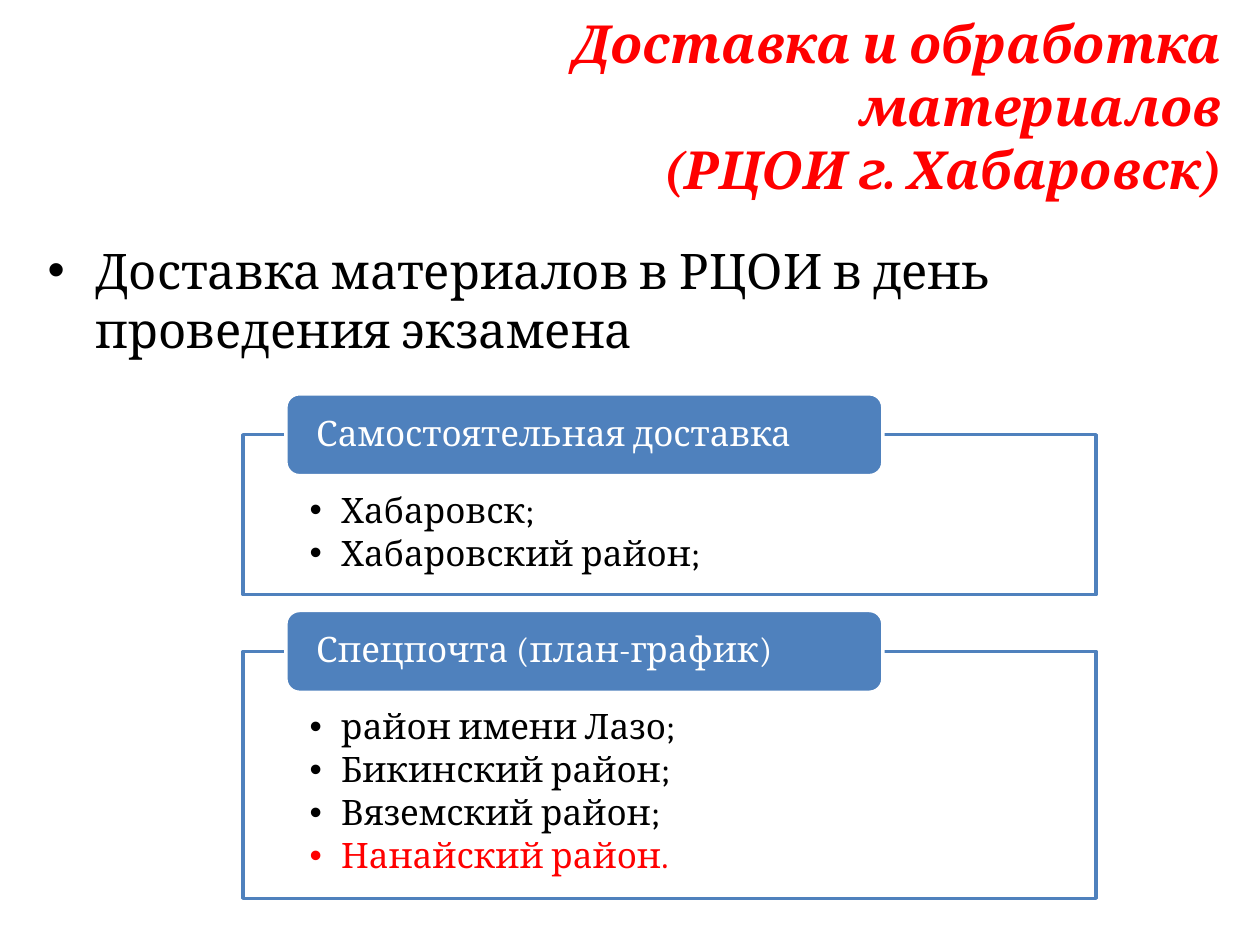
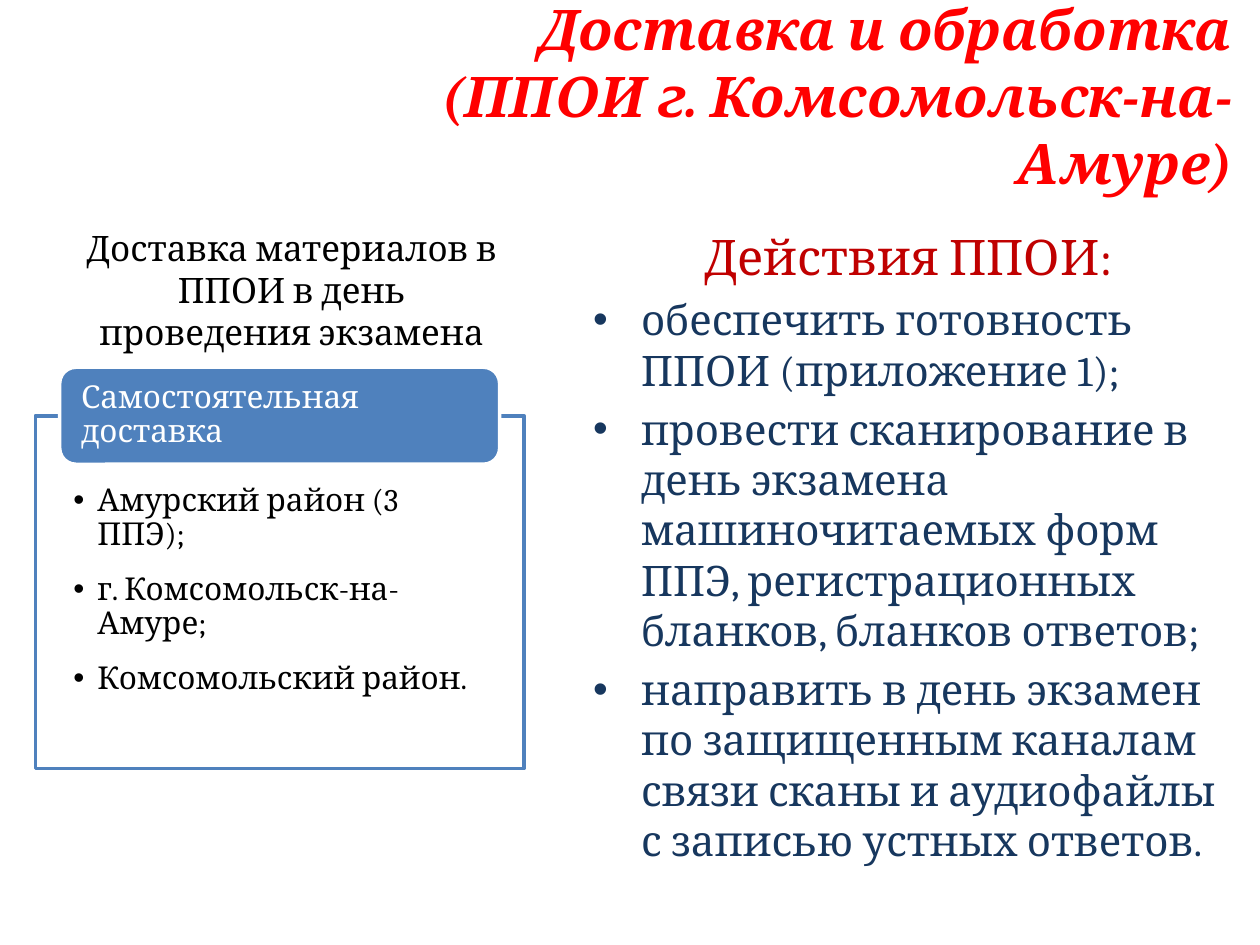
from dataclasses import dataclass
from lxml import etree
from pptx import Presentation
from pptx.dml.color import RGBColor
from pptx.enum.shapes import MSO_SHAPE as Shape
from pptx.enum.text import MSO_ANCHOR as Anchor, PP_ALIGN as Align
from pptx.oxml.ns import qn
from pptx.util import Inches, Pt


@dataclass(frozen=True)
class Theme:
    font: str = "Cambria"
    white: str = "FFFFFF"
    black: str = "000000"
    red: str = "FF0000"
    dark_red: str = "C00000"
    blue: str = "4F81BD"
    navy: str = "17375E"
    small: int = 18
    medium: int = 20
    text: int = 24
    large: int = 28
    outline: int = 2
    body_indent: float = 0.38


THEME = Theme()


def line(text, size, color, **formats):
    """Describe one paragraph; formats may hold bullet indent, align, spacing."""
    return dict(text=text, size=size, color=color, **formats)


def bullet(text, size, color):
    return line(text, size, color, indent=THEME.body_indent, before=0.2 * size)


PAGES = [
    dict(
        title=("Доставка и обработка материалов\n(РЦОИ г. Хабаровск)", 30, (2.56, 0.21, 7.24, 1.25)),
        texts=[
            ((0.28, 1.86, 9.21, 1.2), [
                bullet("Доставка материалов в РЦОИ в день проведения экзамена",
                       THEME.large, THEME.black),
            ]),
        ],
        panels=[
            dict(heading="Самостоятельная доставка", frame=(1.93, 3.45, 6.77, 1.27),
                 items=["Хабаровск;", "Хабаровский район;"]),
            dict(heading="Спецпочта (план-график)", frame=(1.93, 5.17, 6.77, 1.96),
                 items=["район имени Лазо;", "Бикинский район;", "Вяземский район;",
                        "Нанайский район."],
                 highlighted="Нанайский район."),
        ],
        panel_style=dict(size=THEME.medium, tab_share=0.7, tab_height=0.65, indent=0.25, after=3),
    ),
    dict(
        title=("Доставка и обработка\n(ППОИ г. Комсомольск-на-Амуре)", 32, (2.48, 0.13, 7.4, 1.25)),
        texts=[
            ((0.5, 1.75, 3.63, 1.1), [
                line("Доставка материалов в ППОИ в день проведения экзамена",
                     THEME.medium, THEME.black, align=Align.CENTER),
            ]),
            ((4.61, 1.75, 5.2, 5.31), [
                line("Действия ППОИ:", THEME.large, THEME.dark_red, align=Align.CENTER),
                *(bullet(text, THEME.text, THEME.navy) for text in (
                    "обеспечить готовность ППОИ (приложение 1);",
                    "провести сканирование в день экзамена машиночитаемых форм ППЭ, "
                    "регистрационных бланков, бланков ответов;",
                    "направить в день экзамен по защищенным каналам связи сканы и "
                    "аудиофайлы с записью устных ответов.",
                )),
            ]),
        ],
        panels=[
            dict(heading="Самостоятельная доставка", frame=(0.28, 3.3, 3.88, 2.8),
                 items=["Амурский район (3 ППЭ);", "г. Комсомольск-на-Амуре;",
                        "Комсомольский район."]),
        ],
        panel_style=dict(size=THEME.small, tab_share=0.9, tab_height=0.77, indent=0.19, after=12),
    ),
]


def set_bullet(para, indent):
    properties = para._p.get_or_add_pPr()
    properties.set("marL", str(Inches(indent)))
    properties.set("indent", str(-Inches(indent)))
    etree.SubElement(properties, qn("a:buFont")).set("typeface", "Arial")
    etree.SubElement(properties, qn("a:buChar")).set("char", "•")


def write(box, lines, anchor=Anchor.TOP, margins=(0.1, 0.05, 0.1, 0.05), **font_formats):
    frame = box.text_frame
    frame.word_wrap = True
    frame.vertical_anchor = anchor
    for side, margin in zip(("left", "top", "right", "bottom"), margins):
        setattr(frame, f"margin_{side}", Inches(margin))
    for number, entry in enumerate(lines):
        para = frame.add_paragraph() if number else frame.paragraphs[0]
        para.text = entry["text"]
        if "indent" in entry:
            set_bullet(para, entry["indent"])
        spacing = dict(
            alignment=entry.get("align", Align.LEFT),
            line_spacing=entry.get("leading", 1.0),
            space_before=Pt(entry.get("before", 0) if number else 0),
            space_after=Pt(entry.get("after", 0)),
        )
        for name, value in spacing.items():
            setattr(para, name, value)
        formats = dict(name=THEME.font, size=Pt(entry["size"]), **font_formats)
        for span in para.runs:
            for name, value in formats.items():
                setattr(span.font, name, value)
            span.font.color.rgb = RGBColor.from_string(entry["color"])


def add_text(page, place, lines, **options):
    write(page.shapes.add_textbox(*map(Inches, place)), lines, **options)


def add_block(page, kind, place, fill, outline):
    block = page.shapes.add_shape(kind, *map(Inches, place))
    block.shadow.inherit = False
    block.fill.solid()
    block.fill.fore_color.rgb = RGBColor.from_string(fill)
    block.line.color.rgb = RGBColor.from_string(outline)
    block.line.width = Pt(THEME.outline)
    return block


def add_panel(page, heading, frame, items, style, highlighted=None):
    """Draw a framed list with a heading tab centred on the frame's top edge."""
    left, top, width, _ = frame
    size, tab_height = style["size"], style["tab_height"]
    side = 0.078 * width
    body = add_block(page, Shape.RECTANGLE, frame, THEME.white, THEME.blue)
    write(body, [
        line(item, size, THEME.red if item == highlighted else THEME.black,
             indent=style["indent"], leading=0.9, after=style["after"])
        for item in items
    ], margins=(side, 0.71 * tab_height, side, 0.15))

    tab_place = (left + 0.05 * width, top - tab_height / 2, style["tab_share"] * width, tab_height)
    tab = add_block(page, Shape.ROUNDED_RECTANGLE, tab_place, THEME.blue, THEME.white)
    tab_side = 0.0265 * width + 0.03
    write(tab, [line(heading, size, THEME.white, leading=0.9)],
          anchor=Anchor.MIDDLE, margins=(tab_side, 0.03, tab_side, 0.03))


def main():
    deck = Presentation()
    deck.slide_width, deck.slide_height = Inches(10), Inches(7.5)
    for content in PAGES:
        page = deck.slides.add_slide(deck.slide_layouts[6])
        title, size, place = content["title"]
        add_text(page, place, [line(title, size, THEME.red, align=Align.RIGHT)],
                 anchor=Anchor.MIDDLE, bold=True, italic=True)
        for place, lines in content["texts"]:
            add_text(page, place, lines)
        for panel in content["panels"]:
            add_panel(page, style=content["panel_style"], **panel)
    deck.save("out.pptx")


if __name__ == "__main__":
    main()
